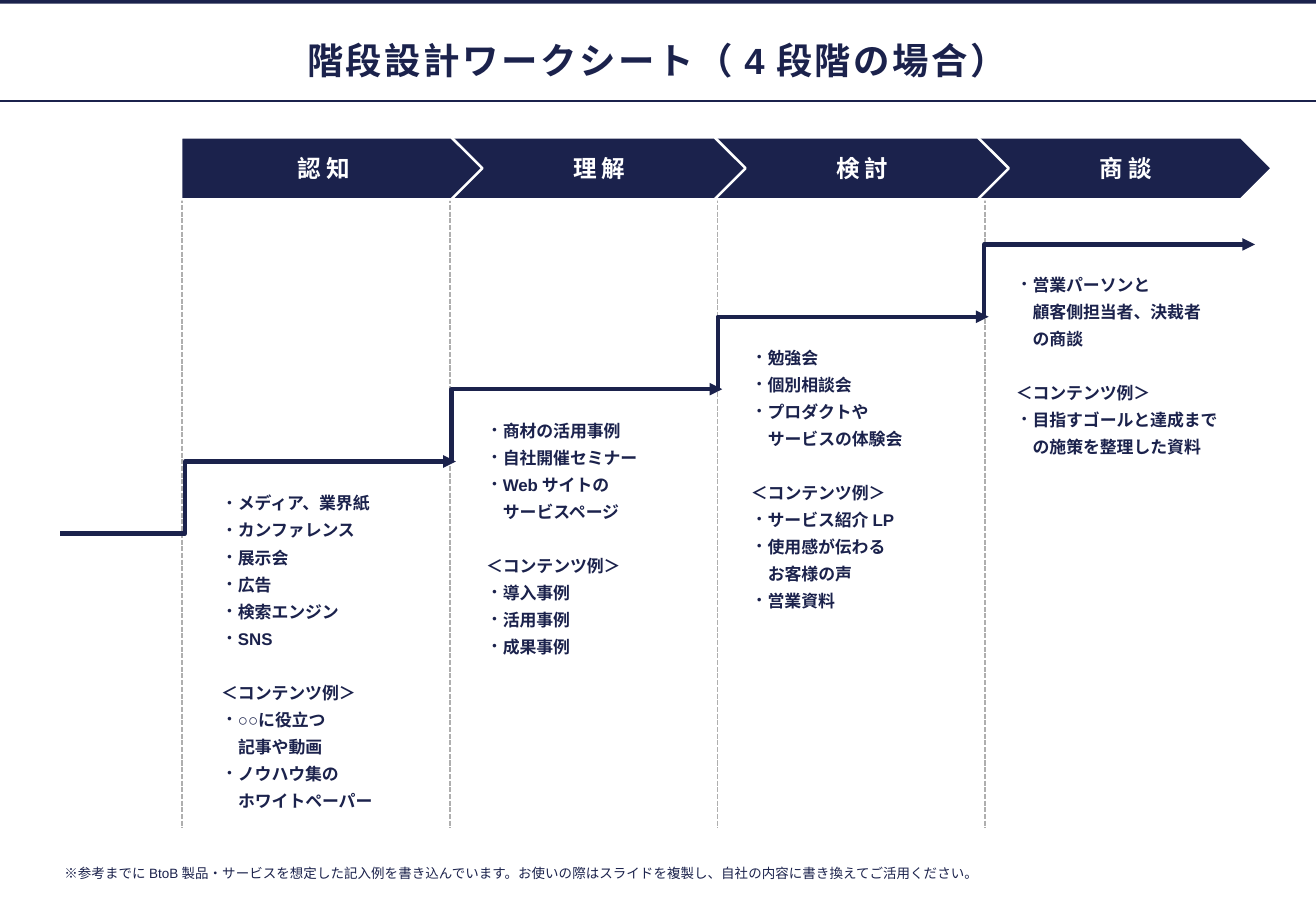
from lxml import etree
from pptx import Presentation
from pptx import util as u
from pptx.dml.color import RGBColor
from pptx.enum import dml, shapes, text
from pptx.oxml.ns import qn

COLORS = {"navy": "1B224C", "gray": "AFAFAF", "white": "FFFFFF"}
FONT = "Arial"
INSET = 2.9

# Each stage: name and list lines; "・" starts a bullet, "＜" a heading, others continue
STAGES = [
    ("認知", ["・メディア、業界紙", "・カンファレンス", "・展示会", "・広告",
              "・検索エンジン", "・SNS", "＜コンテンツ例＞", "・○○に役立つ",
              "記事や動画", "・ノウハウ集の", "ホワイトペーパー"]),
    ("理解", ["・商材の活用事例", "・自社開催セミナー", "・Webサイトの",
              "サービスページ", "＜コンテンツ例＞", "・導入事例", "・活用事例",
              "・成果事例"]),
    ("検討", ["・勉強会", "・個別相談会", "・プロダクトや", "サービスの体験会",
              "＜コンテンツ例＞", "・サービス紹介LP", "・使用感が伝わる",
              "お客様の声", "・営業資料"]),
    ("商談", ["・営業パーソンと", "顧客側担当者、決裁者", "の商談",
              "＜コンテンツ例＞", "・目指すゴールと達成まで", "の施策を整理した資料"]),
]


def rgb(name):
    return RGBColor.from_string(COLORS[name])


def sub(parent, tag, **attrs):
    return etree.SubElement(parent, qn(tag), attrs)


class Sheet:
    def __init__(self, s):
        self.s = s

    def frame(self, sp, anchor, wrap=True, left=INSET):
        tf = sp.text_frame
        tf.auto_size = text.MSO_AUTO_SIZE.NONE
        tf.word_wrap = wrap
        tf.vertical_anchor = anchor
        tf.margin_left = u.Pt(left)
        tf.margin_top = tf.margin_right = tf.margin_bottom = u.Pt(INSET)
        return tf

    def place(self, sp, x, y, w, h):
        sp.left, sp.top, sp.width, sp.height = map(u.Pt, (x, y, w, h))

    def run(self, p, words, size, color="navy", bold=True, spacing=0):
        r = p.add_run()
        r.text = words
        r.font.size, r.font.bold, r.font.name = u.Pt(size), bold, FONT
        r.font.color.rgb = rgb(color)
        rPr = r.font._element
        sub(rPr, "a:ea", typeface=FONT)
        if spacing:
            rPr.set("spc", str(int(spacing * 100)))

    def title(self, words, x, y, w, h):
        sp = self.s.shapes.title
        self.place(sp, x, y, w, h)
        p = self.frame(sp, text.MSO_ANCHOR.MIDDLE, wrap=False).paragraphs[0]
        p.alignment, p.line_spacing = text.PP_ALIGN.CENTER, 1.5
        self.run(p, words, 21.6, spacing=1.5)

    def note(self, words, x, y, w, h):
        sp = self.s.shapes.add_textbox(*map(u.Pt, (x, y, w, h)))
        p = self.frame(sp, text.MSO_ANCHOR.MIDDLE).paragraphs[0]
        self.run(p, words, 8, bold=False)

    def block(self, kind, x, y, w, h, border=0):
        sp = self.s.shapes.add_shape(kind, *map(u.Pt, (x, y, w, h)))
        sp.shadow.inherit = False
        sp.fill.solid()
        sp.fill.fore_color.rgb = rgb("navy")
        if border:
            sp.line.color.rgb = rgb("white")
            sp.line.width = u.Pt(border)
        else:
            sp.line.fill.background()
        return sp

    def stage(self, words, x, y, w, h, left):
        sp = self.block(shapes.MSO_SHAPE.PENTAGON, x, y, w, h, 1.5)
        p = self.frame(sp, text.MSO_ANCHOR.MIDDLE, left=left).paragraphs[0]
        p.alignment = text.PP_ALIGN.CENTER
        self.run(p, words, 14, "white", spacing=3)

    def line(self, x1, y1, x2, y2, color="navy", width=1.0, dash=None,
             kind=shapes.MSO_CONNECTOR.STRAIGHT):
        sp = self.s.shapes.add_connector(kind, *map(u.Pt, (x1, y1, x2, y2)))
        sp.line.color.rgb = rgb(color)
        sp.line.width = u.Pt(width)
        if dash:
            sp.line.dash_style = dash
        sub(sp._element.spPr, "a:effectLst")
        return sp

    def step(self, x, y, w, rise):
        sp = self.line(x, y, x + w, y - rise, width=2.5,
                       kind=shapes.MSO_CONNECTOR.ELBOW)
        # Bend close to the start, arrowhead at the end
        geom = sp._element.spPr.find(qn("a:prstGeom"))
        for old in geom.findall(qn("a:avLst")):
            geom.remove(old)
        sub(sub(geom, "a:avLst"), "a:gd", name="adj1", fmla="val 500")
        sub(sp.line._get_or_add_ln(), "a:tailEnd", type="triangle")

    def list(self, sp, lines, x, y, w, h):
        self.place(sp, x, y, w, h)
        tf = self.frame(sp, text.MSO_ANCHOR.TOP)
        for i, words in enumerate(lines):
            p = tf.paragraphs[0] if i == 0 else tf.add_paragraph()
            bullet, heading = words.startswith("・"), words.startswith("＜")
            pPr = p._p.get_or_add_pPr()
            margin = 4 if bullet else 0 if heading else 10
            pPr.set("marL", str(u.Pt(margin)))
            pPr.set("indent", str(u.Pt(-4 if bullet else 0)))
            if bullet:
                sub(pPr, "a:buFont", typeface=FONT)
                sub(pPr, "a:buChar", char="・")
            else:
                sub(pPr, "a:buNone")
            p.alignment = text.PP_ALIGN.LEFT
            p.space_before = u.Pt(16 if heading else 0)
            p.space_after = u.Pt(4)
            self.run(p, words.removeprefix("・"), 10)


def main():
    prs = Presentation()
    prs.slide_width, prs.slide_height = u.Pt(780), u.Pt(540)
    s = prs.slides.add_slide(prs.slide_layouts[4])
    sheet = Sheet(s)

    # Header
    sheet.line(0, 59.8, 780, 59.8)
    sheet.block(shapes.MSO_SHAPE.RECTANGLE, 0, 0, 780, 2.2)
    sheet.title("階段設計ワークシート（4段階の場合）", 35.3, 15.1, 708.5, 28.1)

    # Column dividers
    for i in range(len(STAGES)):
        x = 108 + 158.6 * i
        sheet.line(x, 85.7, x, 491, "gray", dash=dml.MSO_LINE.SQUARE_DOT)

    # Stage arrows, the leftmost in front
    for i, (name, _) in reversed(list(enumerate(STAGES))):
        sheet.stage(name, 107.3 + 156 * i, 81.4, 178.6, 36.7,
                    17.3 if i else INSET)

    # Staircase and lists
    sheet.line(109.5, 316.2, 35.3, 316.2, width=2.5)
    bodies = [sp for sp in s.placeholders if sp.placeholder_format.idx]
    for i, (sp, (_, lines)) in enumerate(zip(bodies, STAGES)):
        sheet.step(108.9 + 157.9 * i, 316.2 - 42.9 * i, 161.3, 42.6)
        sheet.list(sp, lines, 128.2 + 157 * i, 289.4 - 43.2 * i, 133.2, 198.7)

    # Footnote
    sheet.note("※参考までにBtoB製品・サービスを想定した記入例を書き込んでいます。"
               "お使いの際はスライドを複製し、自社の内容に書き換えてご活用ください。",
               35.3, 511.9, 620.6, 11.5)
    prs.save("out.pptx")


if __name__ == "__main__":
    main()
